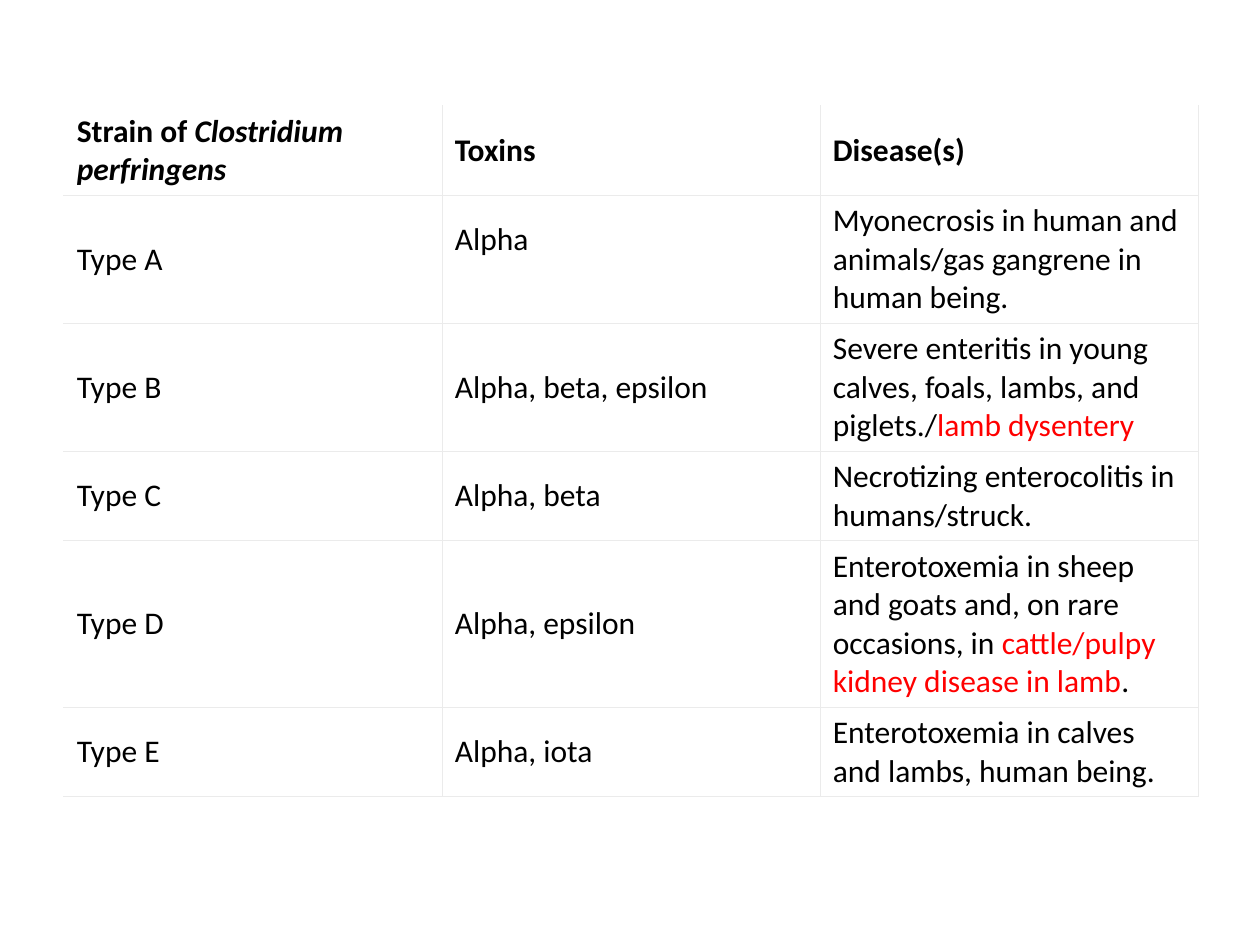
from dataclasses import dataclass

from lxml import etree
from pptx import Presentation
from pptx.dml.color import RGBColor
from pptx.enum import text
from pptx.oxml import ns
from pptx.util import Inches, Pt


@dataclass(frozen=True)
class Theme:
    font: str = "Calibri"
    size: int = 18
    ink: str = "000000"
    accent: str = "FF0000"
    paper: str = "FFFFFF"
    rule: str = "EBEBEB"
    rule_width: float = 0.75


THEME = Theme()
PLAIN, ITALIC, ACCENT = "plain", "italic", "accent"

# Each cell is a list of (wording, style) spans
HEADER = [
    [("Strain of ", PLAIN), ("Clostridium perfringens", ITALIC)],
    [("Toxins", PLAIN)],
    [("Disease(s)", PLAIN)],
]
STRAINS = [
    ("Type A", "Alpha\v",
     [("Myonecrosis in human and animals/gas gangrene in human being.", PLAIN)]),
    ("Type B", "Alpha, beta, epsilon",
     [("Severe enteritis in young calves, foals, lambs, and piglets./", PLAIN),
      ("lamb dysentery", ACCENT)]),
    ("Type C", "Alpha, beta",
     [("Necrotizing enterocolitis in humans/struck.", PLAIN)]),
    ("Type D", "Alpha, epsilon",
     [("Enterotoxemia in sheep and goats and, on rare occasions, in ", PLAIN),
      ("cattle/pulpy kidney disease in lamb", ACCENT), (".", PLAIN)]),
    ("Type E", "Alpha, iota",
     [("Enterotoxemia in calves and lambs, human being.", PLAIN)]),
]
ROW_LINES = [2, 3, 3, 2, 4, 2]
LINE_HEIGHT, CELL_PADDING = 0.3, 0.1


def add_border(cell, side):
    line = etree.SubElement(cell._tc.get_or_add_tcPr(), ns.qn(f"a:ln{side}"),
                            w=str(Pt(THEME.rule_width)))
    fill = etree.SubElement(line, ns.qn("a:solidFill"))
    etree.SubElement(fill, ns.qn("a:srgbClr"), val=THEME.rule)


def fill_cell(cell, spans, bold, sides):
    for side in sides:
        add_border(cell, side)
    cell.fill.solid()
    cell.fill.fore_color.rgb = RGBColor.from_string(THEME.paper)
    cell.vertical_anchor = text.MSO_ANCHOR.MIDDLE

    para = cell.text_frame.paragraphs[0]
    for wording, style in spans:
        span = para.add_run()
        span.text = wording.rstrip("\v")
        span.font.bold = bold
        span.font.italic = style == ITALIC
        color = THEME.accent if style == ACCENT else THEME.ink
        span.font.color.rgb = RGBColor.from_string(color)
        if wording.endswith("\v"):
            para.add_line_break()
    para.font.name = THEME.font
    para.font.size = Pt(THEME.size)


def add_strain_table(page, left, top, width):
    rows = [HEADER] + [[[(strain, PLAIN)], [(toxins, PLAIN)], diseases]
                       for strain, toxins, diseases in STRAINS]
    heights = [Inches(lines * LINE_HEIGHT + CELL_PADDING) for lines in ROW_LINES]
    table = page.shapes.add_table(len(rows), len(HEADER), left, top,
                                  width, sum(heights)).table
    table.first_row = table.horz_banding = False
    for row, height in zip(table.rows, heights):
        row.height = height

    # Rules everywhere except along the outer top and left edges
    for i, row in enumerate(rows):
        for j, spans in enumerate(row):
            sides = ("L" if j else "") + "R" + ("T" if i else "") + "B"
            fill_cell(table.cell(i, j), spans, bold=i == 0, sides=sides)


def main():
    deck = Presentation()
    deck.slide_width, deck.slide_height = Inches(10), Inches(7.5)
    page = deck.slides.add_slide(deck.slide_layouts[6])
    add_strain_table(page, Inches(0.51), Inches(0.84), Inches(9))
    deck.save("out.pptx")


if __name__ == "__main__":
    main()
